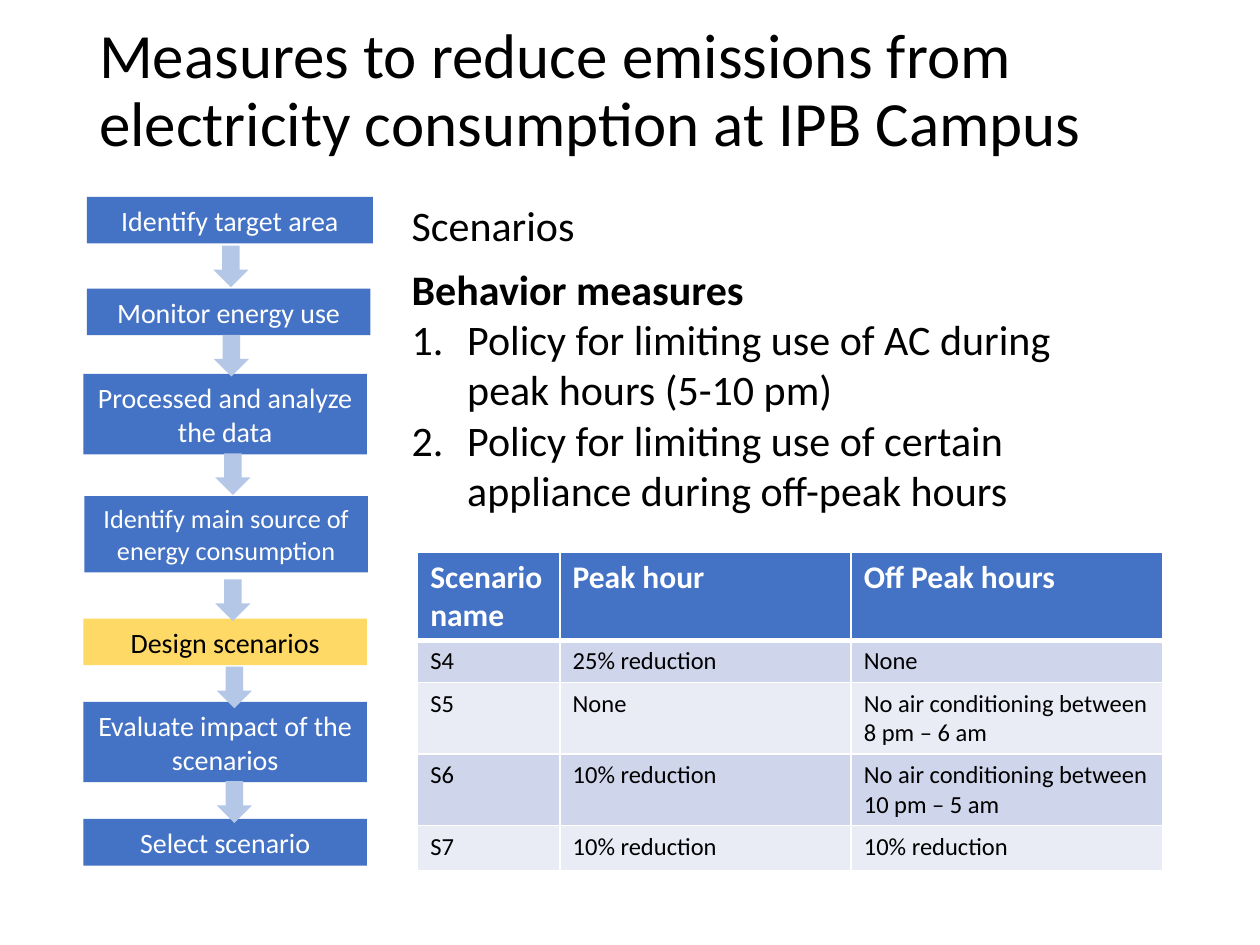
from dataclasses import dataclass

from lxml.etree import SubElement
from pptx import Presentation
from pptx.dml.color import RGBColor
from pptx.enum.shapes import MSO_SHAPE
from pptx.enum.text import MSO_ANCHOR, PP_ALIGN
from pptx.oxml.ns import qn
from pptx.util import Cm, Pt

FONT = "Calibri"
BLACK = RGBColor(0x00, 0x00, 0x00)
WHITE = RGBColor(0xFF, 0xFF, 0xFF)
BLUE = RGBColor(0x44, 0x72, 0xC4)
PALE_BLUE = RGBColor(0xB4, 0xC7, 0xE7)
YELLOW = RGBColor(0xFF, 0xD9, 0x66)
BANDS = (RGBColor(0xCF, 0xD5, 0xEA), RGBColor(0xE9, 0xEB, 0xF5))


@dataclass(frozen=True)
class Step:
    text: str
    left: float
    top: float
    height: float
    width: float = 5.72
    size: float = 16
    fill: RGBColor = BLUE
    color: RGBColor = WHITE


@dataclass(frozen=True)
class Arrow:
    left: float
    top: float


STEPS = (
    Step("Identify target area", 1.75, 3.97, 0.94, width=5.77),
    Step("Monitor energy use", 1.75, 5.82, 0.94),
    Step("Processed and analyze the data", 1.68, 7.54, 1.62),
    Step("Identify main source of energy consumption", 1.7, 10.0, 1.54, size=15),
    Step("Design scenarios", 1.68, 12.47, 0.94, fill=YELLOW, color=BLACK),
    Step("Evaluate impact of the scenarios", 1.68, 14.15, 1.62),
    Step("Select scenario", 1.68, 16.51, 0.94),
)
ARROWS = (
    Arrow(4.3, 4.95), Arrow(4.31, 6.75), Arrow(4.34, 9.14),
    Arrow(4.34, 11.68), Arrow(4.37, 13.44), Arrow(4.37, 15.75),
)
COLUMN_WIDTHS = (2.87, 5.87, 6.27)
ROW_HEIGHTS = (1.75, 0.84, 1.42, 1.42, 0.91)
SCENARIOS = (
    ("Scenario name", "Peak hour", "Off Peak hours"),
    ("S4", "25% reduction", "None"),
    ("S5", "None", "No air conditioning between 8 pm – 6 am"),
    ("S6", "10% reduction", "No air conditioning between 10 pm – 5 am"),
    ("S7", "10% reduction", "10% reduction"),
)


def write(para, text: str, size: float, color: RGBColor, bold: bool = False) -> None:
    para.text = text
    para.font.name = FONT
    para.font.size = Pt(size)
    para.font.bold = bold
    para.font.color.rgb = color


def add_block(page, kind, left: float, top: float, width: float, height: float,
              fill: RGBColor):
    block = page.shapes.add_shape(kind, Cm(left), Cm(top), Cm(width), Cm(height))
    block.shadow.inherit = False
    block.fill.solid()
    block.fill.fore_color.rgb = fill
    block.line.fill.background()
    return block


def add_step(page, step: Step) -> None:
    box = add_block(page, MSO_SHAPE.RECTANGLE, step.left, step.top,
                    step.width, step.height, step.fill)
    box.text_frame.word_wrap = True
    para = box.text_frame.paragraphs[0]
    para.alignment = PP_ALIGN.CENTER
    write(para, step.text, step.size, step.color)


def add_text(page, left: float, top: float, width: float, height: float,
             text: str, size: float, bold: bool = False):
    box = page.shapes.add_textbox(Cm(left), Cm(top), Cm(width), Cm(height))
    box.text_frame.word_wrap = True
    write(box.text_frame.paragraphs[0], text, size, BLACK, bold)
    return box.text_frame


def add_numbered(frame, text: str) -> None:
    para = frame.add_paragraph()
    write(para, text, 24, BLACK)
    properties = para._p.get_or_add_pPr()
    indent = Cm(1.12)
    properties.set("marL", str(indent))
    properties.set("indent", str(-indent))
    number = properties.makeelement(qn("a:buAutoNum"), {"type": "arabicPeriod"})
    properties.insert(0, number)


def set_borders(cell, header: bool, below_header: bool) -> None:
    properties = cell._tc.get_or_add_tcPr()
    thick = {"a:lnB": header, "a:lnT": below_header}
    for side in ("a:lnL", "a:lnR", "a:lnT", "a:lnB"):
        width = Pt(3 if thick.get(side) else 1)
        line = SubElement(properties, qn(side), w=str(width))
        fill = SubElement(line, qn("a:solidFill"))
        SubElement(fill, qn("a:srgbClr"), val=str(WHITE))


def add_scenario_table(page) -> None:
    table = page.shapes.add_table(
        len(SCENARIOS), len(COLUMN_WIDTHS), Cm(8.42), Cm(11.13),
        Cm(sum(COLUMN_WIDTHS)), Cm(sum(ROW_HEIGHTS))).table
    for column, width in zip(table.columns, COLUMN_WIDTHS):
        column.width = Cm(width)
    for index, (row, height) in enumerate(zip(table.rows, ROW_HEIGHTS)):
        row.height = Cm(height)
        header = index == 0
        for cell, text in zip(row.cells, SCENARIOS[index]):
            set_borders(cell, header, index == 1)
            cell.fill.solid()
            cell.fill.fore_color.rgb = BLUE if header else BANDS[(index - 1) % 2]
            write(cell.text_frame.paragraphs[0], text, 18 if header else 14,
                  WHITE if header else BLACK, header)


def main() -> None:
    deck = Presentation()
    deck.slide_width, deck.slide_height = Cm(25.4), Cm(19.05)
    page = deck.slides.add_slide(deck.slide_layouts[6])

    # Title
    title = add_text(page, 1.75, 0.25, 22.45, 3.23,
                     "Measures to reduce emissions from electricity "
                     "consumption at IPB Campus", 36)
    title.vertical_anchor = MSO_ANCHOR.MIDDLE
    title.paragraphs[0].line_spacing = 0.9

    # Process flow
    for step in STEPS:
        add_step(page, step)
    for arrow in ARROWS:
        add_block(page, MSO_SHAPE.DOWN_ARROW, arrow.left, arrow.top,
                  0.71, 0.84, PALE_BLUE)

    # Behavior measures
    add_text(page, 8.05, 3.89, 6.91, 1.27, "Scenarios", 24)
    measures = add_text(page, 8.05, 5.18, 15.19, 5.38, "Behavior measures", 24, True)
    add_numbered(measures, "Policy for limiting use of AC during peak hours (5-10 pm)")
    add_numbered(measures, "Policy for limiting use of certain appliance "
                           "during off-peak hours")

    # Scenario table
    add_scenario_table(page)

    deck.save("out.pptx")


if __name__ == "__main__":
    main()
